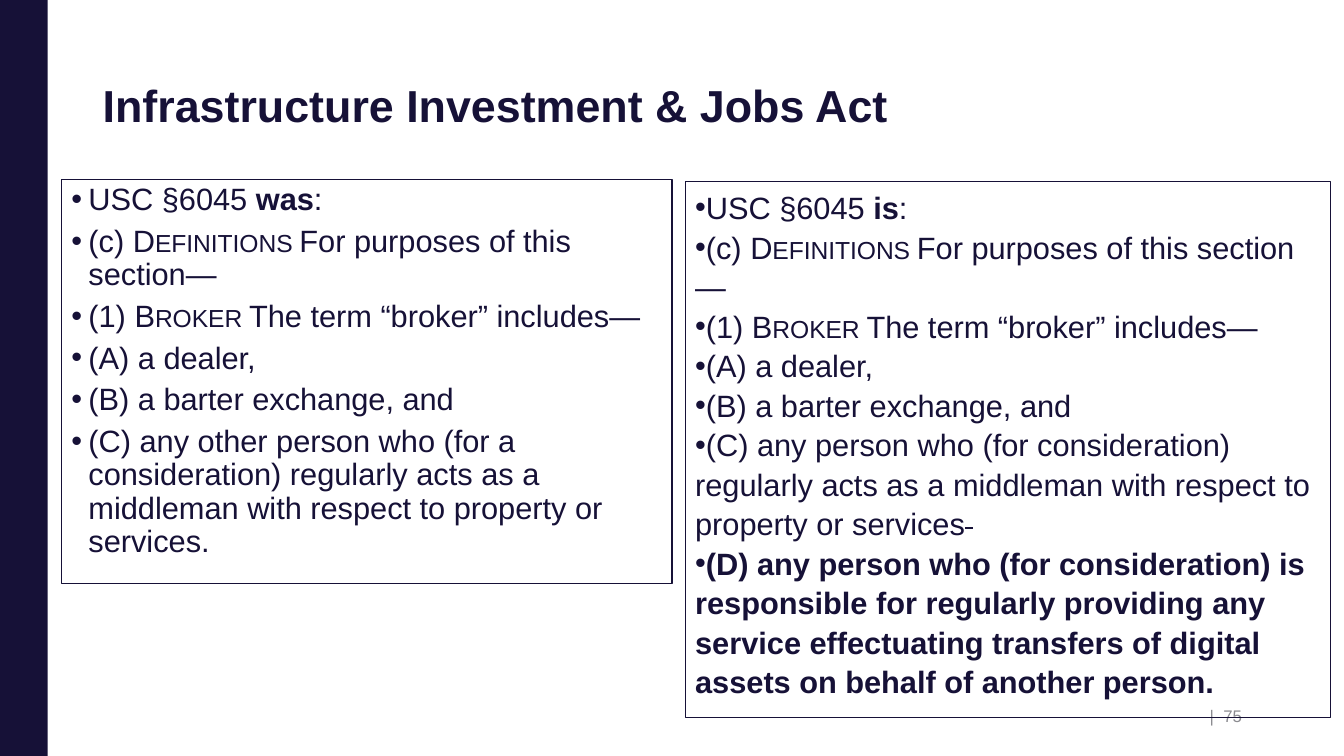
from lxml.etree import SubElement
from pptx import Presentation
from pptx.dml.color import RGBColor
from pptx.enum.shapes import MSO_SHAPE as Shape
from pptx.enum.text import MSO_ANCHOR as Anchor, PP_ALIGN as Align
from pptx.oxml.ns import qn
from pptx.util import Cm, Pt

NAVY = RGBColor(0x16, 0x11, 0x37)
GRAY = RGBColor(0x8C, 0x8C, 0x91)
FONT = "Arial"

PLAIN, BOLD, SMALL_CAPS, STRIKE = "plain", "bold", "small caps", "strike"

SHARED_CLAUSES = [
    [("(c) ", PLAIN), ("Definitions ", SMALL_CAPS),
     ("For purposes of this section—", PLAIN)],
    [("(1) ", PLAIN), ("Broker ", SMALL_CAPS),
     ("The term “broker” includes—", PLAIN)],
    [("(A) a dealer,", PLAIN)],
    [("(B) a barter exchange, and", PLAIN)],
]
OLD_LAW = [
    [("USC §6045 ", PLAIN), ("was", BOLD), (":", PLAIN)],
    *SHARED_CLAUSES,
    [("(C) any other person who (for a consideration) regularly acts as "
      "a middleman with respect to property or services.", PLAIN)],
]
NEW_LAW = [
    [("USC §6045 ", PLAIN), ("is", BOLD), (":", PLAIN)],
    *SHARED_CLAUSES,
    [("(C) any person who (for consideration) regularly acts as a "
      "middleman with respect to property or services", PLAIN), (" ", STRIKE)],
    [("(D) any person who (for consideration) is responsible for regularly "
      "providing any service effectuating transfers of digital assets on "
      "behalf of another person.", BOLD)],
]


def set_font(paragraph, size, color):
    paragraph.font.name = FONT
    paragraph.font.size = Pt(size)
    paragraph.font.color.rgb = color


def add_label(slide, box, text, size, color, align=Align.LEFT, anchor=Anchor.TOP):
    frame = slide.shapes.add_textbox(*box).text_frame
    frame.word_wrap = True
    frame.vertical_anchor = anchor
    paragraph = frame.paragraphs[0]
    paragraph.text = text
    paragraph.alignment = align
    set_font(paragraph, size, color)
    return paragraph


def add_rectangle(slide, box):
    shape = slide.shapes.add_shape(Shape.RECTANGLE, *box)
    shape.shadow.inherit = False
    return shape


def add_side_bar(slide, box):
    bar = add_rectangle(slide, box)
    bar.fill.solid()
    bar.fill.fore_color.rgb = NAVY
    bar.line.fill.background()


def add_bullet(paragraph, indent):
    """Hang a round bullet to the left of the paragraph by the indent."""
    properties = paragraph._p.get_or_add_pPr()
    properties.set("marL", str(indent))
    properties.set("indent", str(-indent))
    SubElement(properties, qn("a:buFont"), typeface=FONT)
    SubElement(properties, qn("a:buChar"), char="•")


def add_styled_run(paragraph, text, style):
    run = paragraph.add_run()
    run.text = text
    if style == BOLD:
        run.font.bold = True
    elif style == SMALL_CAPS:
        run._r.get_or_add_rPr().set("cap", "small")
    elif style == STRIKE:
        run._r.get_or_add_rPr().set("strike", "sngStrike")


def add_law_box(slide, box, clauses, indent, line_spacing, gap):
    """Draw an outlined box with one bullet per clause, gap points around each."""
    shape = add_rectangle(slide, box)
    shape.fill.background()
    shape.line.color.rgb = NAVY
    shape.line.width = Pt(1)
    frame = shape.text_frame
    frame.word_wrap = True
    frame.vertical_anchor = Anchor.TOP
    for index, clause in enumerate(clauses):
        paragraph = frame.add_paragraph() if index else frame.paragraphs[0]
        paragraph.alignment = Align.LEFT
        paragraph.line_spacing = line_spacing
        paragraph.space_before = Pt(gap if index else 0)
        paragraph.space_after = Pt(gap)
        add_bullet(paragraph, indent)
        set_font(paragraph, 22, NAVY)
        for text, style in clause:
            add_styled_run(paragraph, text, style)


def main():
    presentation = Presentation()
    presentation.slide_width = Cm(33.87)
    presentation.slide_height = Cm(19.05)
    slide = presentation.slides.add_slide(presentation.slide_layouts[6])

    add_side_bar(slide, (0, 0, Cm(1.2), presentation.slide_height))
    title = add_label(slide, (Cm(2.34), Cm(1.8), Cm(29.21), Cm(1.85)),
                      "Infrastructure Investment & Jobs Act", 32, NAVY,
                      anchor=Anchor.MIDDLE)
    title.font.bold = True
    title.line_spacing = 0.9
    add_label(slide, (Cm(23.93), Cm(17.65), Cm(7.62), Cm(1.02)),
              "|  75", 12, GRAY, align=Align.RIGHT)
    add_law_box(slide, (Cm(1.55), Cm(4.52), Cm(15.39), Cm(10.19)),
                OLD_LAW, Cm(0.43), 0.9, 3)
    add_law_box(slide, (Cm(17.27), Cm(4.57), Cm(16.26), Cm(13.51)),
                NEW_LAW, Cm(0), 1.07, 0)

    presentation.save("out.pptx")


if __name__ == "__main__":
    main()
